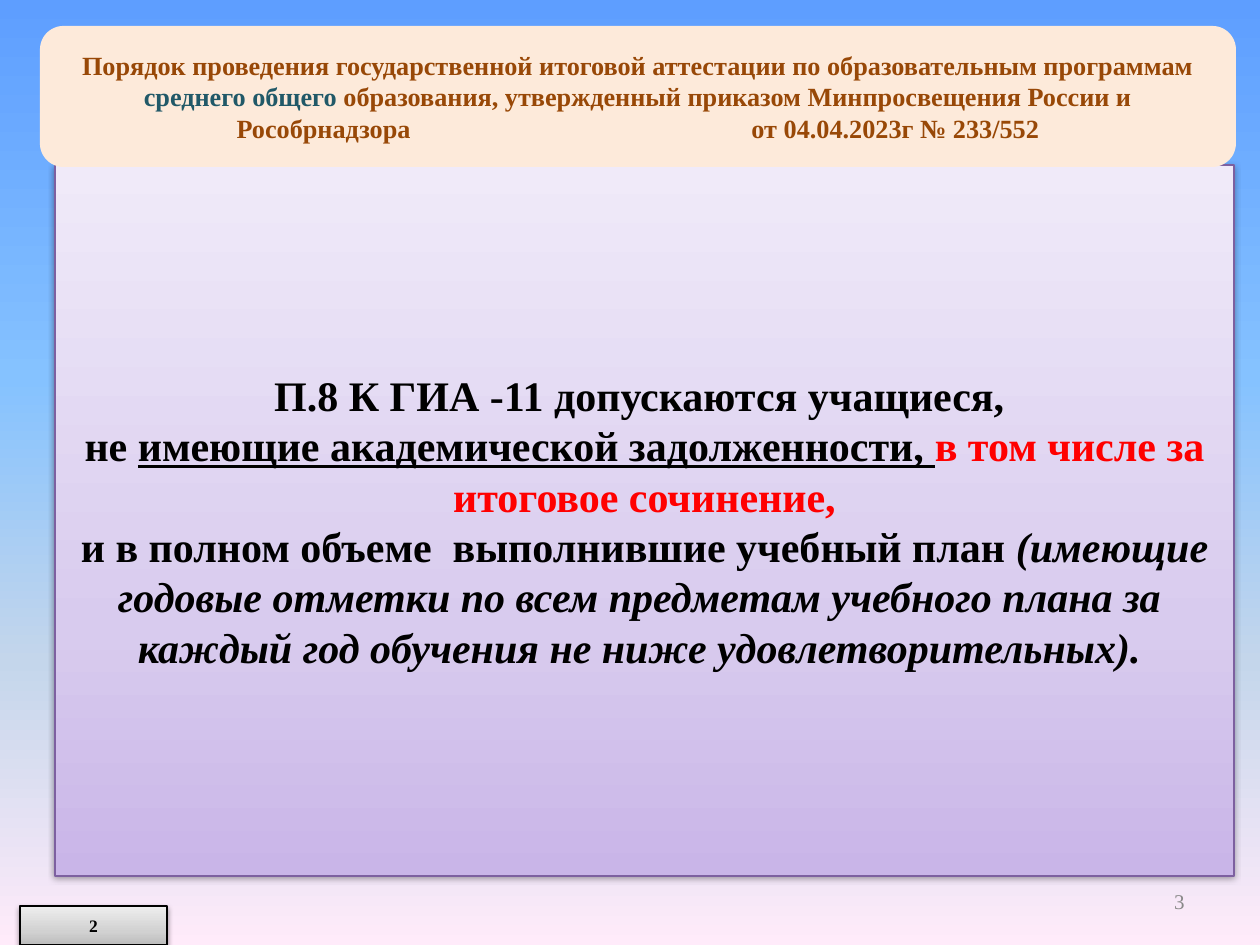
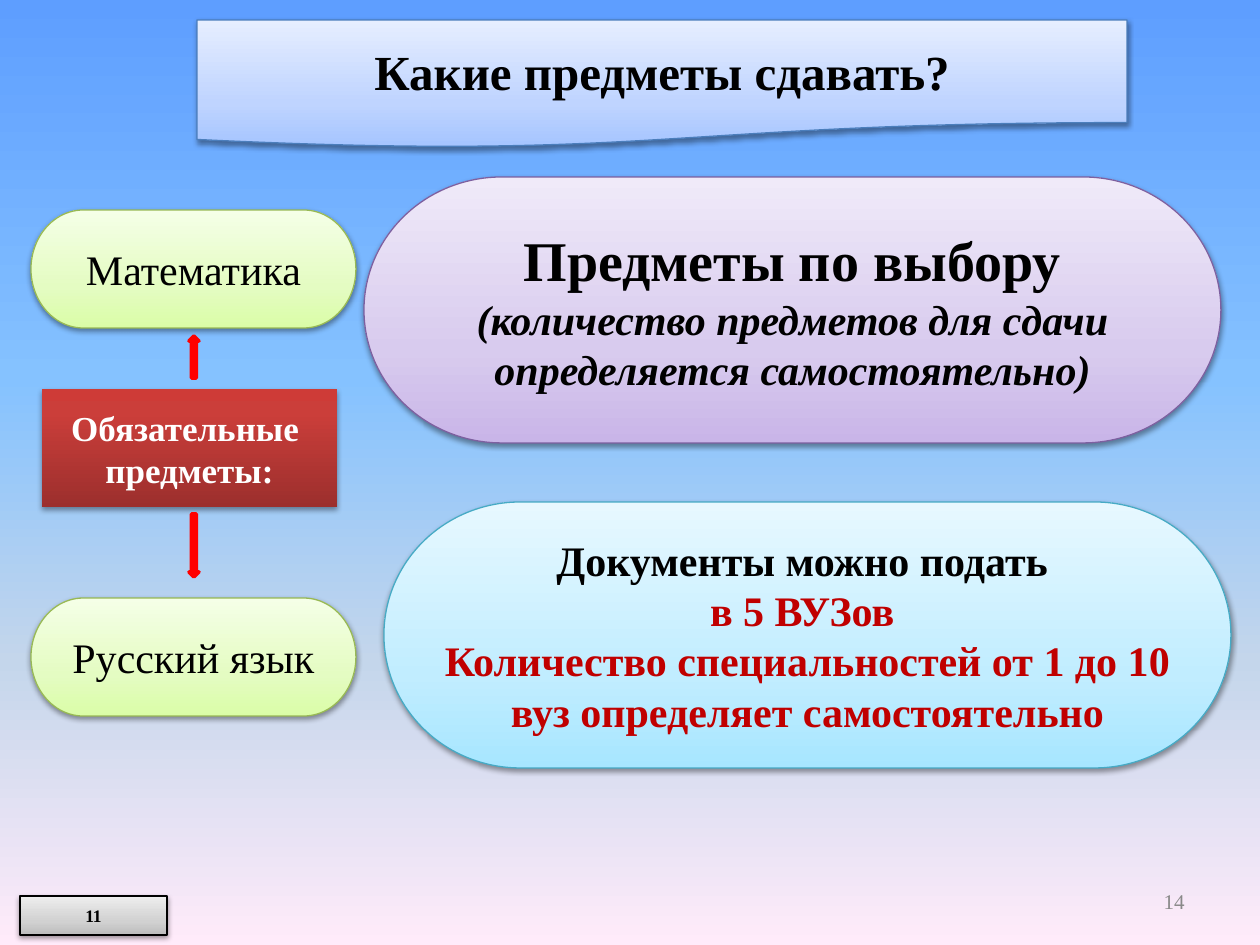
from copy import deepcopy
from pptx import Presentation
from pptx.dml.color import RGBColor
from pptx.enum import shapes, text
from pptx.oxml import parse_xml
from pptx.oxml.ns import nsdecls, qn
from pptx.util import Emu, Pt

PX = 914400 / 126
FONT = "Times New Roman"
BLACK, RED, DARK_RED, BROWN = "000000", "FF0000", "C00000", "984807"
SKY = [(0, "5E9EFF"), (40, "85C2FF"), (70, "C4D6EB"), (100, "FFEBFA")]
LILAC = [(0, "C9B5E8"), (35, "D8CBEE"), (100, "F0EAF9")]
GREY = [(0, "BDBDBD"), (35, "D1D1D1"), (100, "EEEEEE")]
BLUE = [(0, "A4C4FF"), (35, "BFD4FF"), (100, "E6EEFF")]
CRIMSON = [(0, "9C2F2D"), (80, "CB3E3A"), (100, "CE3B37")]
LIME = [(0, "DAFDA7"), (35, "E4FCC2"), (100, "F5FFE7")]
AQUA = [(0, "A7E6FF"), (35, "C1EDFF"), (100, "E7F8FF")]
KIND = shapes.MSO_SHAPE
rgb = RGBColor.from_string


def paint(fill, owner, colours, angle):
    if isinstance(colours, str):
        fill.solid()
        fill.fore_color.rgb = rgb(colours)
        return
    fill.gradient()
    fill.gradient_angle = angle
    stop_list = owner._element.find(".//" + qn("a:gsLst"))
    for _ in colours[2:]:
        stop_list.append(deepcopy(stop_list[0]))
    for stop, (percent, colour) in zip(fill.gradient_stops, colours):
        stop.position = percent / 100
        stop.color.rgb = rgb(colour)


def block(slide, kind, box, colours, edge, paragraphs, size=24, colour=BLACK,
          bold=True, align=text.PP_ALIGN.CENTER, edge_width=0.75):
    place = [Emu(round(n * PX)) for n in box]
    if kind is None:
        part = slide.shapes.add_textbox(*place)
    else:
        part = slide.shapes.add_shape(kind, *place)
        part.shadow.inherit = False
        paint(part.fill, part, colours, 90)
        if edge:
            part.line.color.rgb = rgb(edge)
            part.line.width = Pt(edge_width)
        else:
            part.line.fill.background()
        if not isinstance(colours, str):
            part._element.spPr.find(qn("a:effectLst")).append(parse_xml(
                f'<a:outerShdw {nsdecls("a")} blurRad="40000" dist="20000" dir="5400000" '
                'rotWithShape="0"><a:srgbClr val="000000"><a:alpha val="38000"/>'
                '</a:srgbClr></a:outerShdw>'))
    frame = part.text_frame
    frame.word_wrap = True
    frame.vertical_anchor = text.MSO_ANCHOR.MIDDLE
    for index, pieces in enumerate(paragraphs):
        paragraph = frame.add_paragraph() if index else frame.paragraphs[0]
        paragraph.alignment = align
        for words, style in pieces:
            run = paragraph.add_run()
            run.text = words
            run.font.name = FONT
            run.font.size = Pt(style.get("size", size))
            run.font.bold = bold
            run.font.italic = style.get("italic")
            run.font.underline = style.get("underline")
            run.font.color.rgb = rgb(style.get("colour", colour))
            if "spacing" in style:
                run._r.get_or_add_rPr().set("spc", str(style["spacing"]))
    return part


deck = Presentation()
deck.slide_width, deck.slide_height = Emu(9144000), Emu(6858000)
admission, subjects = [deck.slides.add_slide(deck.slide_layouts[6]) for _ in range(2)]

for slide, page, counter, counter_top in [(admission, "3", "2", 906), (subjects, "14", "11", 896)]:
    paint(slide.background.fill, slide, SKY, 270)
    block(slide, None, (903, 876, 294, 50), None, None, [[(page, {})]], 12, "898989",
          False, text.PP_ALIGN.RIGHT)
    button = block(slide, KIND.ROUNDED_RECTANGLE, (20, counter_top, 147, 39), GREY, BLACK,
                   [[(counter, {})]], 10)
    button.adjustments[0] = 0

block(admission, KIND.RECTANGLE, (55, 165, 1179, 711), LILAC, "7D60A0", [
    [("П.8 К ГИА -11 допускаются учащиеся, ", {})],
    [("не ", {}),
     ("имеющие академической задолженности, ", {"underline": True}),
     ("в том числе за итоговое сочинение,", {"colour": RED})],
    [("и в полном объеме  выполнившие учебный план ", {}),
     ("(имеющие годовые отметки по всем предметам учебного плана за  каждый год обучения "
      "не ниже удовлетворительных). ", {"italic": True})],
])
block(admission, KIND.ROUNDED_RECTANGLE, (40, 26, 1196, 141), "FDEADA", None, [[
    ("Порядок проведения государственной итоговой аттестации по образовательным программам ", {}),
    ("среднего общего ", {"colour": "215968"}),
    ("образования, утвержденный приказом Минпросвещения России и Рособрнадзора", {}),
    (" ", {"spacing": 19100}),
    ("от 04.04.2023г № 233/552", {}),
]], 15, BROWN)

block(subjects, KIND.FLOWCHART_DOCUMENT, (197, 20, 930, 128), BLUE, "4B7EBC",
      [[("Какие предметы сдавать?", {})]], 28)
block(subjects, KIND.FLOWCHART_PROCESS, (42, 389, 295, 118), CRIMSON, None,
      [[("Обязательные ", {})], [("предметы:", {})]], 20, "FFFFFF")
for subject, top in [("Математика", 210), ("Русский язык", 598)]:
    block(subjects, KIND.FLOWCHART_TERMINATOR, (31, top, 325, 118), LIME, "98B955",
          [[(subject, {})]], bold=False)
for arrow, top, height in [(KIND.UP_ARROW, 336, 42), (KIND.DOWN_ARROW, 514, 63)]:
    block(subjects, arrow, (189, top, 10, height), RED, RED, [], edge_width=2)
block(subjects, KIND.FLOWCHART_TERMINATOR, (384, 502, 847, 266), AQUA, "46AAC5", [
    [("Документы можно подать ", {})],
    [("в 5 ВУЗов ", {"colour": DARK_RED})],
    [("Количество специальностей от 1 до 10 вуз определяет самостоятельно", {"colour": DARK_RED})],
])
block(subjects, KIND.FLOWCHART_TERMINATOR, (364, 177, 857, 266), LILAC, "7D60A0", [
    [("Предметы по выбору", {"size": 32})],
    [("(количество предметов для сдачи определяется самостоятельно)", {"italic": True})],
])

deck.save("out.pptx")
